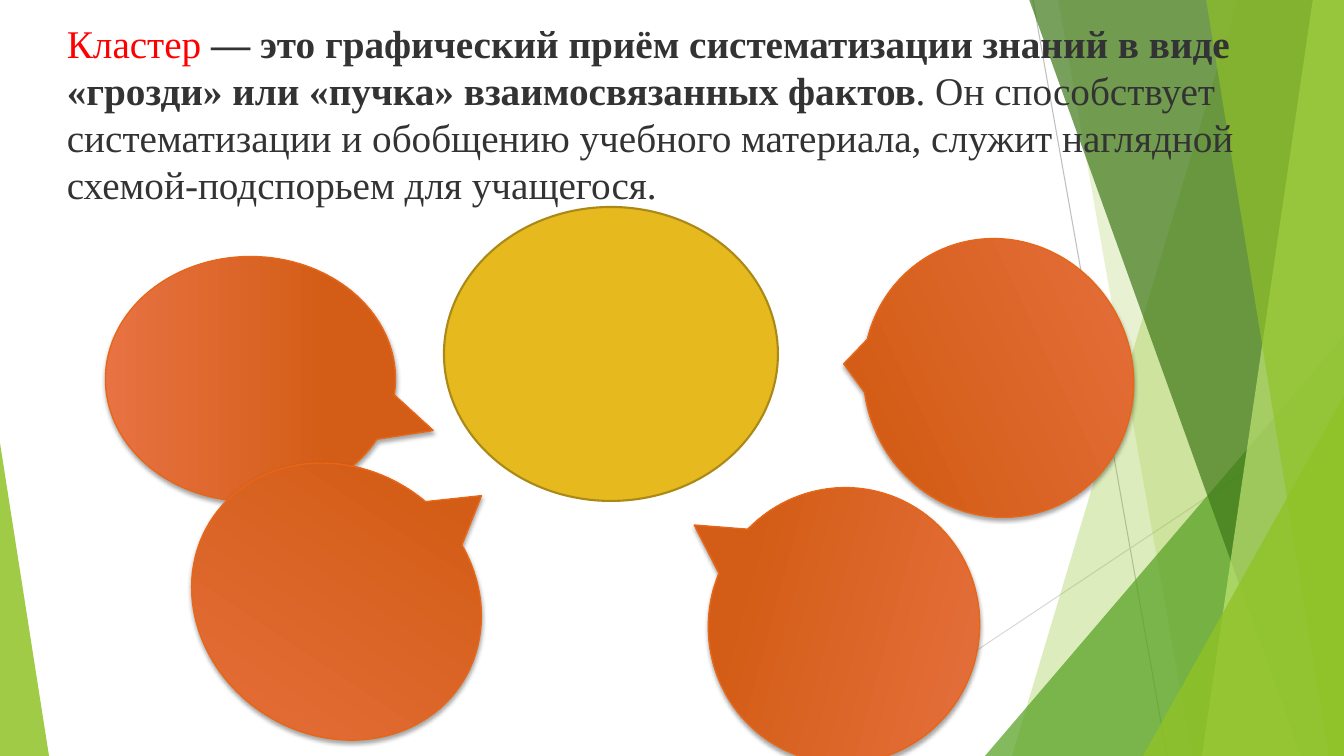
"""Slide that defines the cluster technique above an empty cluster diagram."""
from lxml import etree
from pptx import Presentation
from pptx.dml.color import RGBColor
from pptx.enum.shapes import MSO_CONNECTOR, MSO_SHAPE
from pptx.oxml.ns import qn
from pptx.util import Pt

STRAIGHT = MSO_CONNECTOR.STRAIGHT
TRIANGLE = MSO_SHAPE.ISOSCELES_TRIANGLE
ELLIPSE = MSO_SHAPE.OVAL
CALLOUT = MSO_SHAPE.OVAL_CALLOUT
PX = 914400 / 100.8
WIDTH, HEIGHT = 1344, 756
FONT = "Times New Roman"

COLORS = {
    "lime": "90C226", "green": "54A021", "forest": "3F7819", "pale": "C0E474",
    "grey": "BFBFBF", "silver": "D9D9D9", "gold": "E6B91E", "bronze": "AA8916",
    "coral": "E87242", "rust": "D35D16", "orange": "E76618",
    "red": "FF0000", "ink": "333333", "black": "000000",
}
RAYS = [((1033, 0), (1167, 756), "grey"), ((1344, 406), (818, 756), "silver")]
FACETS = [
    {"edge": (1238, 1012), "color": "lime", "alpha": 30},
    {"edge": (1058, 1192), "color": "lime", "alpha": 20},
    {"box": (985, 336, 359, 420), "apex": 1, "color": "green", "alpha": 72},
    {"edge": (1029, 1301), "color": "forest", "alpha": 70},
    {"edge": (1313, 1202), "color": "pale", "alpha": 70},
    {"edge": (1206, 1329), "color": "lime", "alpha": 65},
    {"box": (1143, 396, 201, 360), "apex": 1, "color": "lime", "alpha": 80},
    {"box": (0, 443, 49, 313), "apex": 0, "color": "lime", "alpha": 85},
]
CENTRE = (444, 207, 334, 294)
DEFAULT_TAIL = (-0.21, 0.63)
BUBBLES = [
    ((858, 244, 281, 268), 64.8, (-0.28, 0.5)),
    ((128, 234, 245, 290), 270, DEFAULT_TAIL),
    ((706, 490, 276, 271), 105.1, DEFAULT_TAIL),
    ((187, 468, 299, 267), 213.4, DEFAULT_TAIL),
]
TEXT_BOX = (57, 14, 1230, 200)
DEFINITION = [
    ("Кластер", "red", False),
    (" — это графический приём систематизации знаний в виде «грозди» или "
     "«пучка» взаимосвязанных фактов", "ink", True),
    (". Он способствует систематизации и обобщению учебного материала, служит "
     "наглядной схемой-подспорьем для учащегося.", "ink", False),
]


def px(*lengths):
    return [round(length * PX) for length in lengths]


def rgb(name):
    return RGBColor.from_string(COLORS[name])


def add_ray(page, start, end, color):
    ray = page.shapes.add_connector(STRAIGHT, *px(*start, *end))
    ray.line.color.rgb = rgb(color)
    ray.line.width = Pt(0.75)
    etree.SubElement(ray._element.spPr, qn("a:effectLst"))


def add_facet(page, facet):
    if "edge" in facet:
        top, bottom = facet["edge"]
        builder = page.shapes.build_freeform(top, -1, scale=PX)
        corners = [(WIDTH, -1), (WIDTH, HEIGHT), (bottom, HEIGHT)]
        builder.add_line_segments(corners, close=True)
        shape = builder.convert_to_shape()
    else:
        shape = page.shapes.add_shape(TRIANGLE, *px(*facet["box"]))
        shape.adjustments[0] = facet["apex"]
    shape.shadow.inherit = False
    shape.line.fill.background()
    shape.fill.solid()
    shape.fill.fore_color.rgb = rgb(facet["color"])
    tint = shape._element.spPr.find(f"{qn('a:solidFill')}/{qn('a:srgbClr')}")
    etree.SubElement(tint, qn("a:alpha"), val=str(facet["alpha"] * 1000))


def add_centre(page):
    centre = page.shapes.add_shape(ELLIPSE, *px(*CENTRE))
    centre.shadow.inherit = False
    centre.fill.solid()
    centre.fill.fore_color.rgb = rgb("gold")
    centre.line.color.rgb = rgb("bronze")
    centre.line.width = Pt(1.5)


def add_bubble(page, frame, rotation, tail):
    bubble = page.shapes.add_shape(CALLOUT, *px(*frame))
    bubble.rotation = rotation
    for index, value in enumerate(tail):
        bubble.adjustments[index] = value
    bubble.fill.gradient()
    bubble.fill.gradient_angle = 270
    ramp = [(0, "coral"), (0.78, "rust")]
    for stop, (position, color) in zip(bubble.fill.gradient_stops, ramp):
        stop.position = position
        stop.color.rgb = rgb(color)
    bubble.line.color.rgb = rgb("orange")
    bubble.line.width = Pt(1)
    bubble.shadow.inherit = False
    effects = bubble._element.spPr.find(qn("a:effectLst"))
    shadow = etree.SubElement(
        effects, qn("a:outerShdw"), blurRad=str(Pt(3)), dist=str(Pt(2)),
        dir="5400000", rotWithShape="0")
    shade = etree.SubElement(shadow, qn("a:srgbClr"), val=COLORS["black"])
    etree.SubElement(shade, qn("a:alpha"), val="35000")


def add_definition(page):
    box = page.shapes.add_textbox(*px(*TEXT_BOX))
    box.text_frame.word_wrap = True
    para = box.text_frame.paragraphs[0]
    para.space_after = Pt(6)
    for text, color, bold in DEFINITION:
        span = para.add_run()
        span.text = text
        span.font.name = FONT
        span.font.size = Pt(28)
        span.font.bold = bold
        span.font.color.rgb = rgb(color)


def main():
    deck = Presentation()
    deck.slide_width, deck.slide_height = px(WIDTH, HEIGHT)
    page = deck.slides.add_slide(deck.slide_layouts[6])
    for ray in RAYS:
        add_ray(page, *ray)
    for facet in FACETS:
        add_facet(page, facet)
    add_centre(page)
    for bubble in BUBBLES:
        add_bubble(page, *bubble)
    add_definition(page)
    deck.save("out.pptx")


if __name__ == "__main__":
    main()
